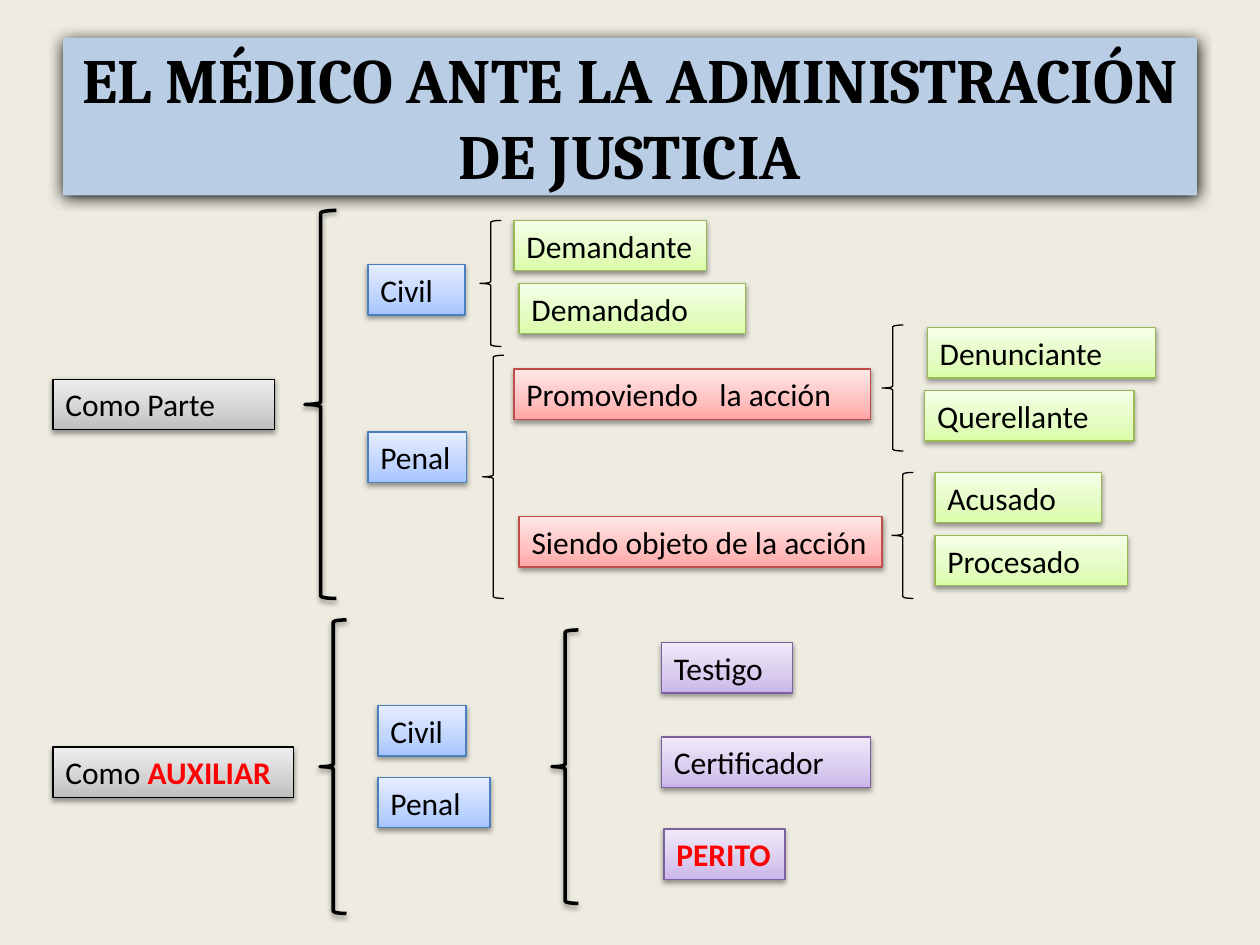
from pptx import Presentation
from pptx.dml.color import RGBColor
from pptx.enum.shapes import MSO_SHAPE
from pptx.enum.text import MSO_ANCHOR, PP_ALIGN
from pptx.oxml import parse_xml
from pptx.oxml.ns import nsdecls
from pptx.util import Inches, Pt

BLACK = RGBColor(0x00, 0x00, 0x00)
RED = RGBColor(0xFF, 0x00, 0x00)
CREAM = RGBColor(0xEE, 0xEC, 0xE1)
PALE_BLUE = RGBColor(0xB9, 0xCD, 0xE5)

GRAY = (BLACK, RGBColor(0xBD, 0xBD, 0xBD), RGBColor(0xD1, 0xD1, 0xD1), RGBColor(0xEE, 0xEE, 0xEE))
BLUE = (RGBColor(0x4B, 0x7E, 0xBC), RGBColor(0xA4, 0xC4, 0xFF),
        RGBColor(0xBF, 0xD4, 0xFF), RGBColor(0xE6, 0xEE, 0xFF))
GREEN = (RGBColor(0x98, 0xB9, 0x55), RGBColor(0xDA, 0xFD, 0xA7),
         RGBColor(0xE4, 0xFC, 0xC2), RGBColor(0xF5, 0xFF, 0xE7))
ROSE = (RGBColor(0xBF, 0x4C, 0x48), RGBColor(0xFF, 0xA6, 0xA5),
        RGBColor(0xFF, 0xC0, 0xBF), RGBColor(0xFF, 0xE7, 0xE7))
PURPLE = (RGBColor(0x7D, 0x60, 0xA0), RGBColor(0xC9, 0xB5, 0xE8),
          RGBColor(0xD8, 0xCB, 0xEE), RGBColor(0xF0, 0xEA, 0xF9))


def write(paragraph, text, size=18, font="Calibri", color=BLACK, bold=False, align=PP_ALIGN.LEFT):
    paragraph.alignment = align
    run = paragraph.add_run()
    run.text = text
    run.font.size = Pt(size)
    run.font.name = font
    run.font.color.rgb = color
    run.font.bold = bold


def cast_shadow(shape, blur=3.1, distance=1.6, opacity=38):
    shape.shadow.inherit = False
    shape._element.spPr.find("{*}effectLst").append(parse_xml(
        f'<a:outerShdw {nsdecls("a")} blurRad="{Pt(blur)}" dist="{Pt(distance)}" dir="5400000" '
        f'rotWithShape="0"><a:srgbClr val="{BLACK}"><a:alpha val="{opacity * 1000}"/>'
        '</a:srgbClr></a:outerShdw>'))


presentation = Presentation()
presentation.slide_width = Inches(10)
presentation.slide_height = Inches(7.5)
slide = presentation.slides.add_slide(presentation.slide_layouts[5])
slide.background.fill.solid()
slide.background.fill.fore_color.rgb = CREAM

heading = slide.shapes.title
heading.left, heading.top = Inches(0.5), Inches(0.3)
heading.width, heading.height = Inches(9), Inches(1.25)
heading.fill.solid()
heading.fill.fore_color.rgb = PALE_BLUE
cast_shadow(heading, blur=8.5, distance=1, opacity=100)
heading.text_frame.vertical_anchor = MSO_ANCHOR.MIDDLE
write(heading.text_frame.paragraphs[0], "EL MÉDICO ANTE LA ADMINISTRACIÓN DE JUSTICIA",
      size=36, font="Cambria", bold=True, align=PP_ALIGN.CENTER)

concepts = [
    ("Como Parte", "", 0.42, 3.01, 1.76, GRAY),
    ("Como ", "AUXILIAR", 0.42, 5.93, 1.91, GRAY),
    ("Civil", "", 2.92, 2.1, 0.77, BLUE),
    ("Penal", "", 2.92, 3.43, 0.78, BLUE),
    ("Demandante", "", 4.08, 1.75, 1.53, GREEN),
    ("Promoviendo   la acción", "", 4.08, 2.93, 2.83, ROSE),
    ("Denunciante", "", 7.36, 2.6, 1.81, GREEN),
    ("Querellante", "", 7.34, 3.1, 1.66, GREEN),
    ("Siendo objeto de la acción", "", 4.12, 4.1, 2.88, ROSE),
    ("Acusado", "", 7.42, 3.75, 1.32, GREEN),
    ("Procesado", "", 7.42, 4.25, 1.53, GREEN),
    ("Demandado", "", 4.12, 2.25, 1.8, GREEN),
    ("Civil", "", 3, 5.6, 0.7, BLUE),
    ("Penal", "", 3, 6.17, 0.89, BLUE),
    ("Testigo", "", 5.25, 5.1, 1.04, PURPLE),
    ("Certificador", "", 5.25, 5.85, 1.66, PURPLE),
    ("", "PERITO", 5.27, 6.58, 0.96, PURPLE),
]
for label, emphasis, left, top, width, (border, *tones) in concepts:
    concept = slide.shapes.add_shape(MSO_SHAPE.RECTANGLE, Inches(left), Inches(top),
                                     Inches(width), Inches(0.4))
    stops = "".join(f'<a:gs pos="{position * 1000}"><a:srgbClr val="{tone}"/></a:gs>'
                    for position, tone in zip((0, 35, 100), tones))
    concept._element.spPr.insert(2, parse_xml(
        f'<a:gradFill {nsdecls("a")} rotWithShape="1"><a:gsLst>{stops}</a:gsLst>'
        '<a:lin ang="16200000" scaled="1"/></a:gradFill>'))
    concept.line.color.rgb = border
    concept.line.width = Pt(0.75)
    cast_shadow(concept)
    frame = concept.text_frame
    frame.word_wrap = True
    frame.margin_right = 0
    frame.vertical_anchor = MSO_ANCHOR.TOP
    if label:
        write(frame.paragraphs[0], label)
    if emphasis:
        write(frame.paragraphs[0], emphasis, color=RED, bold=True)

braces = [
    (3.81, 1.75, 0.17, 1, 0.75),
    (3.83, 2.82, 0.17, 1.93, 0.75),
    (7, 2.58, 0.17, 1, 0.75),
    (7.08, 3.75, 0.17, 1, 0.75),
    (2.42, 1.67, 0.25, 3.08, 2),
    (2.54, 4.92, 0.21, 2.33, 2),
    (4.38, 5, 0.21, 2.17, 2),
]
for left, top, width, height, weight in braces:
    brace = slide.shapes.add_shape(MSO_SHAPE.LEFT_BRACE, Inches(left), Inches(top),
                                   Inches(width), Inches(height))
    brace.fill.background()
    brace.line.color.rgb = BLACK
    brace.line.width = Pt(weight)
    brace.shadow.inherit = False
    if weight == 2:
        cast_shadow(brace)

presentation.save("out.pptx")
